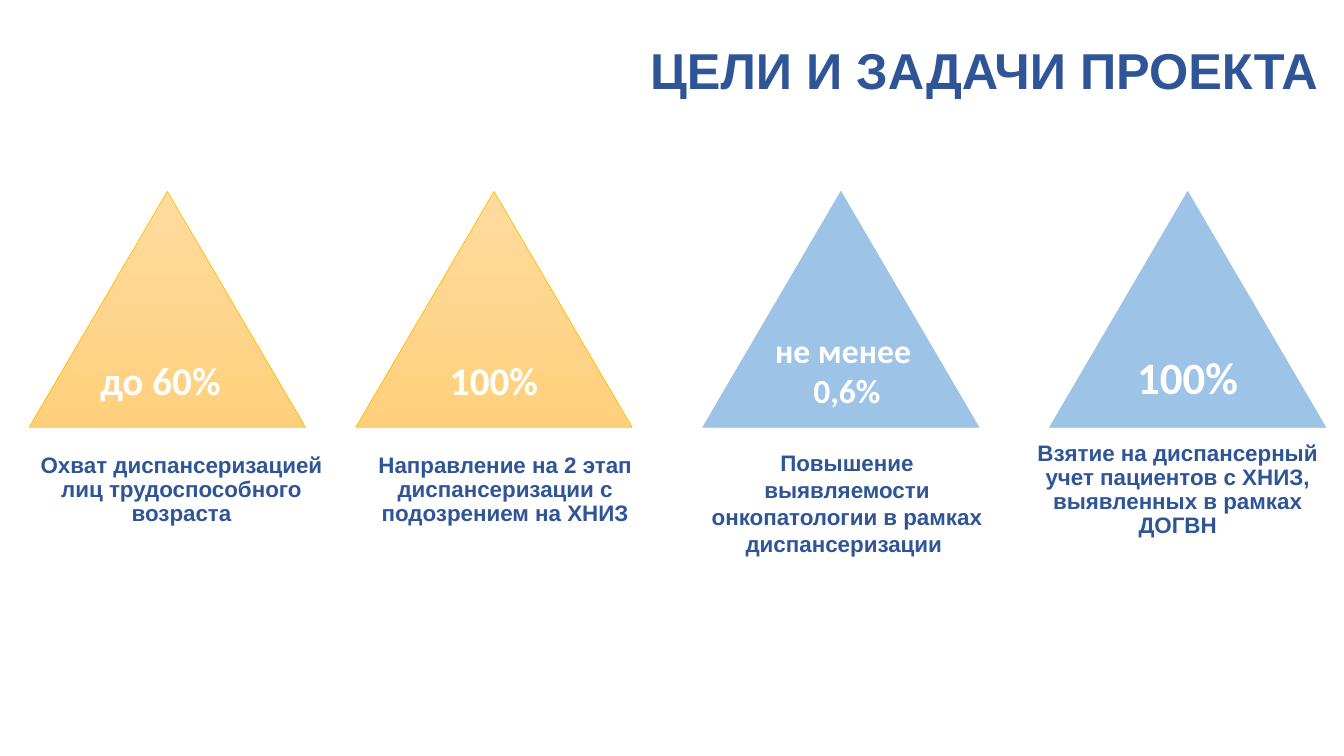
from pptx import Presentation
from pptx.dml.color import RGBColor
from pptx.enum.shapes import MSO_SHAPE
from pptx.enum.text import MSO_ANCHOR, PP_ALIGN
from pptx.util import Inches, Pt

TRIANGLE = MSO_SHAPE.ISOSCELES_TRIANGLE
LEFT, CENTER = PP_ALIGN.LEFT, PP_ALIGN.CENTER
TOP, MIDDLE = MSO_ANCHOR.TOP, MSO_ANCHOR.MIDDLE

COLORS = {
    "navy": "2F5597",
    "white": "FFFFFF",
    "blue": "9DC3E6",
    "gold_light": "FFDB9E",
    "gold_dark": "FFD07C",
    "gold_line": "FFC000",
}
TRIANGLE_TOP, TRIANGLE_WIDTH, TRIANGLE_HEIGHT = 1.9, 2.74, 2.34
VALUE_WIDTH, CAPTION_WIDTH = 2.6, 3.02
VALUE_BOX = {"top": 3.38, "height": 0.59, "spacing": Pt(44.8)}
CAPTION_BOX = {"top": 4.14, "height": 1.45, "spacing": 0.9, "anchor": MIDDLE}

GOALS = [
    {
        "left": 0.29, "gold": True,
        "value": {"text": "до 60%", "left": 0.29, "size": 28, **VALUE_BOX},
        "caption": {"text": "Охват диспансеризацией\nлиц трудоспособного возраста",
                    "left": 0.29, **CAPTION_BOX},
    },
    {
        "left": 3.53, "gold": True,
        "value": {"text": "100%", "left": 3.6, "size": 28, **VALUE_BOX},
        "caption": {"text": "Направление на 2 этап диспансеризации с подозрением на ХНИЗ",
                    "left": 3.5, **CAPTION_BOX},
    },
    {
        "left": 6.97, "gold": False,
        "value": {"text": "не менее \n0,6%", "left": 7.1, "size": 24,
                  "top": 3.27, "height": 0.81},
        "caption": {"text": "Повышение выявляемости онкопатологии в рамках диспансеризации ",
                    "left": 6.89, "top": 4.41, "height": 1.18},
    },
    {
        "left": 10.41, "gold": False,
        "value": {"text": "100%", "left": 10.48, "size": 32, **VALUE_BOX},
        "caption": {"text": "Взятие на диспансерный учет пациентов с ХНИЗ, выявленных в рамках ДОГВН",
                    "left": 10.17, **CAPTION_BOX},
    },
]


def rgb(name):
    return RGBColor.from_string(COLORS[name])


def add_text(slide, text, left, top, width, height, size=16, font="Arial", color="navy",
             align=CENTER, anchor=TOP, spacing=1.0, margins=(0.1, 0.05)):
    """Add bold text, one paragraph a line; margins are horizontal and vertical inches."""
    box = slide.shapes.add_textbox(Inches(left), Inches(top), Inches(width), Inches(height))
    frame = box.text_frame
    frame.word_wrap = True
    frame.vertical_anchor = anchor
    frame.margin_left = frame.margin_right = Inches(margins[0])
    frame.margin_top = frame.margin_bottom = Inches(margins[1])
    frame.text = text
    for paragraph in frame.paragraphs:
        paragraph.alignment = align
        paragraph.line_spacing = spacing
        for run in paragraph.runs:
            run.font.name = font
            run.font.size = Pt(size)
            run.font.bold = True
            run.font.color.rgb = rgb(color)


def add_triangle(slide, left, gold):
    shape = slide.shapes.add_shape(TRIANGLE, Inches(left), Inches(TRIANGLE_TOP),
                                   Inches(TRIANGLE_WIDTH), Inches(TRIANGLE_HEIGHT))
    shape.shadow.inherit = False
    if gold:
        shape.fill.gradient()
        shape.fill.gradient_angle = 270
        for stop, color in zip(shape.fill.gradient_stops, ("gold_light", "gold_dark")):
            stop.color.rgb = rgb(color)
    else:
        shape.fill.solid()
        shape.fill.fore_color.rgb = rgb("blue")
    shape.line.color.rgb = rgb("gold_line" if gold else "blue")
    shape.line.width = Pt(0.5)


def add_goal(slide, goal):
    """Add a triangle with its target value inside and a caption below."""
    add_triangle(slide, goal["left"], goal["gold"])
    add_text(slide, width=VALUE_WIDTH, font="Calibri", color="white", margins=(0, 0),
             **goal["value"])
    add_text(slide, width=CAPTION_WIDTH, **goal["caption"])


def main():
    presentation = Presentation()
    presentation.slide_width = Inches(13.33)
    presentation.slide_height = Inches(7.5)
    slide = presentation.slides.add_slide(presentation.slide_layouts[6])
    add_text(slide, "ЦЕЛИ И ЗАДАЧИ ПРОЕКТА", 6.35, 0, 6.98, 1.45, size=36,
             align=LEFT, anchor=MIDDLE, spacing=0.9)
    for goal in GOALS:
        add_goal(slide, goal)
    presentation.save("out.pptx")


if __name__ == "__main__":
    main()
